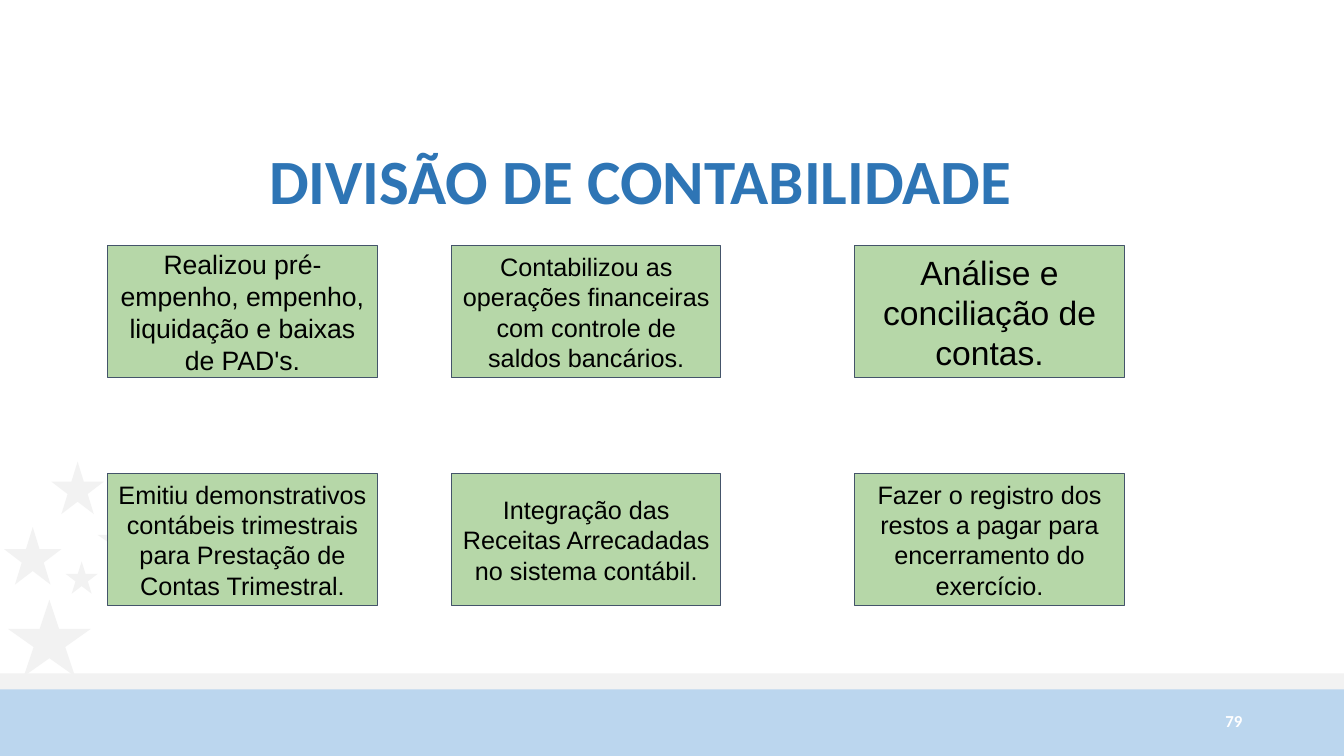
"""Builds the slide of accounting division activities."""
import dataclasses

import pptx
import pptx.dml.color
import pptx.enum.shapes
import pptx.enum.text
import pptx.util

Inches = pptx.util.Inches
Shape = pptx.enum.shapes.MSO_SHAPE
Align = pptx.enum.text.PP_ALIGN


@dataclasses.dataclass(frozen=True)
class Theme:
    heading_font: str = "Calibri"
    body_font: str = "Arial"
    heading: str = "2E75B5"
    text: str = "000000"
    card: str = "B6D7A8"
    outline: str = "44546A"
    band: str = "BBD6EE"
    pale: str = "F2F2F2"
    white: str = "FFFFFF"
    title_size: int = 45
    large_size: int = 24
    medium_size: int = 19
    body_size: int = 18
    number_size: int = 12


theme = Theme()


def add_figure(kind, left, top, width, height, fill):
    figure = page.shapes.add_shape(
        kind, Inches(left), Inches(top), Inches(width), Inches(height))
    figure.shadow.inherit = False
    figure.fill.solid()
    figure.fill.fore_color.rgb = pptx.dml.color.RGBColor.from_string(fill)
    figure.line.fill.background()
    return figure


def write(box, text, *, size, color, font=theme.body_font, bold=False,
          align=Align.CENTER, spacing=1.0, margin=0.1):
    frame = box.text_frame
    frame.word_wrap = True
    frame.auto_size = pptx.enum.text.MSO_AUTO_SIZE.NONE
    frame.vertical_anchor = pptx.enum.text.MSO_ANCHOR.MIDDLE
    frame.margin_left = frame.margin_right = Inches(0.1)
    frame.margin_top = frame.margin_bottom = Inches(margin)
    para = frame.paragraphs[0]
    para.alignment = align
    para.line_spacing = spacing
    span = para.add_run()
    span.text = text
    span.font.name = font
    span.font.size = pptx.util.Pt(size)
    span.font.bold = bold
    span.font.color.rgb = pptx.dml.color.RGBColor.from_string(color)


deck = pptx.Presentation()
deck.slide_width = Inches(13.33)
deck.slide_height = Inches(7.5)
page = deck.slides.add_slide(deck.slide_layouts.get_by_name("Title Only"))

add_figure(Shape.RECTANGLE, 0, 6.82, 13.33, 0.68, theme.band)
add_figure(Shape.RECTANGLE, 0, 6.68, 13.33, 0.16, theme.pale)

stars = [
    (0.04, 5.23, 0.57, 0.57),
    (0.65, 5.57, 0.32, 0.32),
    (0.08, 5.95, 0.82, 0.76),
    (0.51, 4.58, 0.52, 0.52),
    (0.97, 5.12, 0.54, 0.49),
]
for star in stars:
    add_figure(Shape.STAR_5_POINT, *star, theme.pale)

number = page.shapes.add_textbox(Inches(9.42), Inches(6.95), Inches(3), Inches(0.4))
write(number, "79", size=theme.number_size, color=theme.white,
      font=theme.heading_font, bold=True, align=Align.RIGHT, margin=0.05)

columns = [1.07, 4.48, 8.48]
activities = {
    2.44: [
        ("Realizou pré-empenho, empenho, liquidação e baixas de PAD's.",
         theme.medium_size),
        ("Contabilizou as operações financeiras com controle de saldos bancários.",
         theme.body_size),
        ("Análise e conciliação de contas.", theme.large_size),
    ],
    4.7: [
        ("Emitiu demonstrativos contábeis trimestrais para Prestação de "
         "Contas Trimestral.", theme.body_size),
        ("Integração das Receitas Arrecadadas no sistema contábil.",
         theme.body_size),
        ("Fazer o registro dos restos a pagar para encerramento do exercício.",
         theme.body_size),
    ],
}
for top, row in activities.items():
    for left, (text, size) in zip(columns, row):
        card = add_figure(Shape.RECTANGLE, left, top, 2.67, 1.31, theme.card)
        card.line.color.rgb = pptx.dml.color.RGBColor.from_string(theme.outline)
        card.line.width = pptx.util.Pt(0.75)
        write(card, text, size=size, color=theme.text)

title = page.shapes.title
title.left, title.top = Inches(1.05), Inches(1.19)
title.width, title.height = Inches(10.6), Inches(1.28)
write(title, "DIVISÃO DE CONTABILIDADE", size=theme.title_size,
      color=theme.heading, font=theme.heading_font, bold=True,
      spacing=0.9, margin=0.05)

deck.save("out.pptx")
